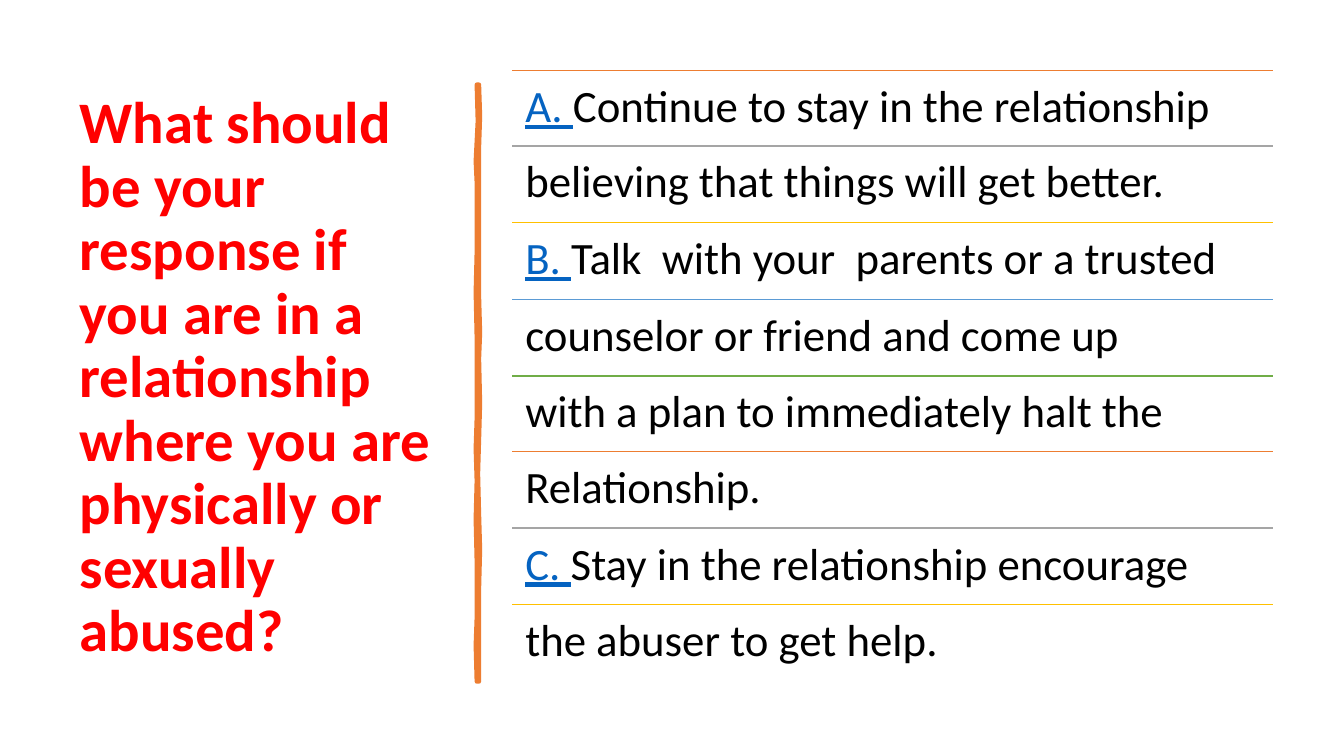
"""Build a question slide with three ruled answer options."""
from lxml import etree
from pptx import Presentation
from pptx import util as u
from pptx.dml.color import RGBColor
from pptx.enum import shapes, text
from pptx.oxml.ns import qn

QUESTION = ("What should be your response if you are in a relationship "
            "where you are physically or sexually abused?")
ANSWER_LINES = [
    ("A. ", "Continue to stay in the relationship"),
    ("", "believing that things will get better."),
    ("B. ", "Talk  with your  parents or a trusted"),
    ("", "counselor or friend and come up"),
    ("", "with a plan to immediately halt the"),
    ("", "Relationship."),
    ("C. ", "Stay in the relationship encourage"),
    ("", "the abuser to get help."),
]
DIVIDER_RIGHT = [(475, 84), (476, 115), (475, 146), (475, 226), (475, 294),
                 (476, 330), (475, 356), (476, 400), (475, 436), (474, 470),
                 (475, 510), (476, 545), (475, 584), (475, 676)]
DIVIDER_LEFT = [(473, 676), (472, 640), (473, 613), (473, 557), (472, 515),
                (473, 477), (472, 445), (473, 415), (473, 335), (472, 290),
                (473, 250), (473, 181), (472, 160), (474, 120), (473, 84)]

RED = RGBColor(0xFF, 0x00, 0x00)
BLACK = RGBColor(0x00, 0x00, 0x00)
LINK_BLUE = RGBColor(0x05, 0x63, 0xC1)
ORANGE = RGBColor(0xED, 0x7D, 0x31)
GRAY = RGBColor(0xA5, 0xA5, 0xA5)
GOLD = RGBColor(0xFF, 0xC0, 0x00)
BLUE = RGBColor(0x5B, 0x9B, 0xD5)
GREEN = RGBColor(0x70, 0xAD, 0x47)
RULE_COLORS = [ORANGE, GRAY, GOLD, BLUE, GREEN]

FONT = "Calibri"
PX = u.Inches(1) // 100
SLIDE_SIZE = (1333, 750)
TITLE_BOX = (69, 70, 374, 611)
LIST_BOX = (508, 70, 755, 606)
INSET = 13


def px(*lengths):
    return [length * PX for length in lengths]


def style_run(run, size, color):
    run.font.name = FONT
    run.font.size = u.Pt(size)
    run.font.color.rgb = color


def add_question(slide):
    title = slide.shapes.title
    title.left, title.top, title.width, title.height = px(*TITLE_BOX)
    frame = title.text_frame
    frame.text = QUESTION
    frame.word_wrap = True
    frame.auto_size = text.MSO_AUTO_SIZE.NONE
    frame.vertical_anchor = text.MSO_ANCHOR.MIDDLE
    paragraph = frame.paragraphs[0]
    paragraph.alignment = text.PP_ALIGN.LEFT
    paragraph.line_spacing = 0.9
    style_run(paragraph.runs[0], 42, RED)
    paragraph.runs[0].font.bold = True


def add_divider(slide):
    start, *rest = DIVIDER_RIGHT + DIVIDER_LEFT
    builder = slide.shapes.build_freeform(*start, scale=PX)
    builder.add_line_segments(rest, close=True)
    divider = builder.convert_to_shape()
    divider.shadow.inherit = False
    divider.fill.solid()
    divider.fill.fore_color.rgb = ORANGE
    divider.line.color.rgb = ORANGE
    divider.line.width = u.Pt(3.25)
    etree.SubElement(divider.line._get_or_add_ln(), qn("a:round"))


def add_rule(slide, left, top, width, color):
    rule = slide.shapes.add_connector(
        shapes.MSO_CONNECTOR.STRAIGHT, *px(left, top, left + width, top))
    rule.line.color.rgb = color
    rule.line.width = u.Pt(1)
    etree.SubElement(rule._element.spPr, qn("a:effectLst"))


def add_answer_line(slide, box, letter, wording):
    frame = slide.shapes.add_textbox(*px(*box)).text_frame
    frame.word_wrap = True
    frame.margin_left = frame.margin_right = INSET * PX
    frame.margin_top = frame.margin_bottom = INSET * PX
    paragraph = frame.paragraphs[0]
    paragraph.line_spacing = 0.9
    if letter:
        run = paragraph.add_run()
        run.text = letter
        style_run(run, 32, LINK_BLUE)
        run.font.underline = True
    run = paragraph.add_run()
    run.text = wording
    style_run(run, 32, BLACK)


def main():
    presentation = Presentation()
    presentation.slide_width, presentation.slide_height = px(*SLIDE_SIZE)
    slide = presentation.slides.add_slide(presentation.slide_layouts[5])
    add_question(slide)
    add_divider(slide)
    left, top, width, height = LIST_BOX
    count = len(ANSWER_LINES)
    for index, (letter, wording) in enumerate(ANSWER_LINES):
        row_top = top + height * index // count
        add_rule(slide, left, row_top, width, RULE_COLORS[index % len(RULE_COLORS)])
        add_answer_line(slide, (left, row_top, width, height // count), letter, wording)
    presentation.save("out.pptx")


if __name__ == "__main__":
    main()
